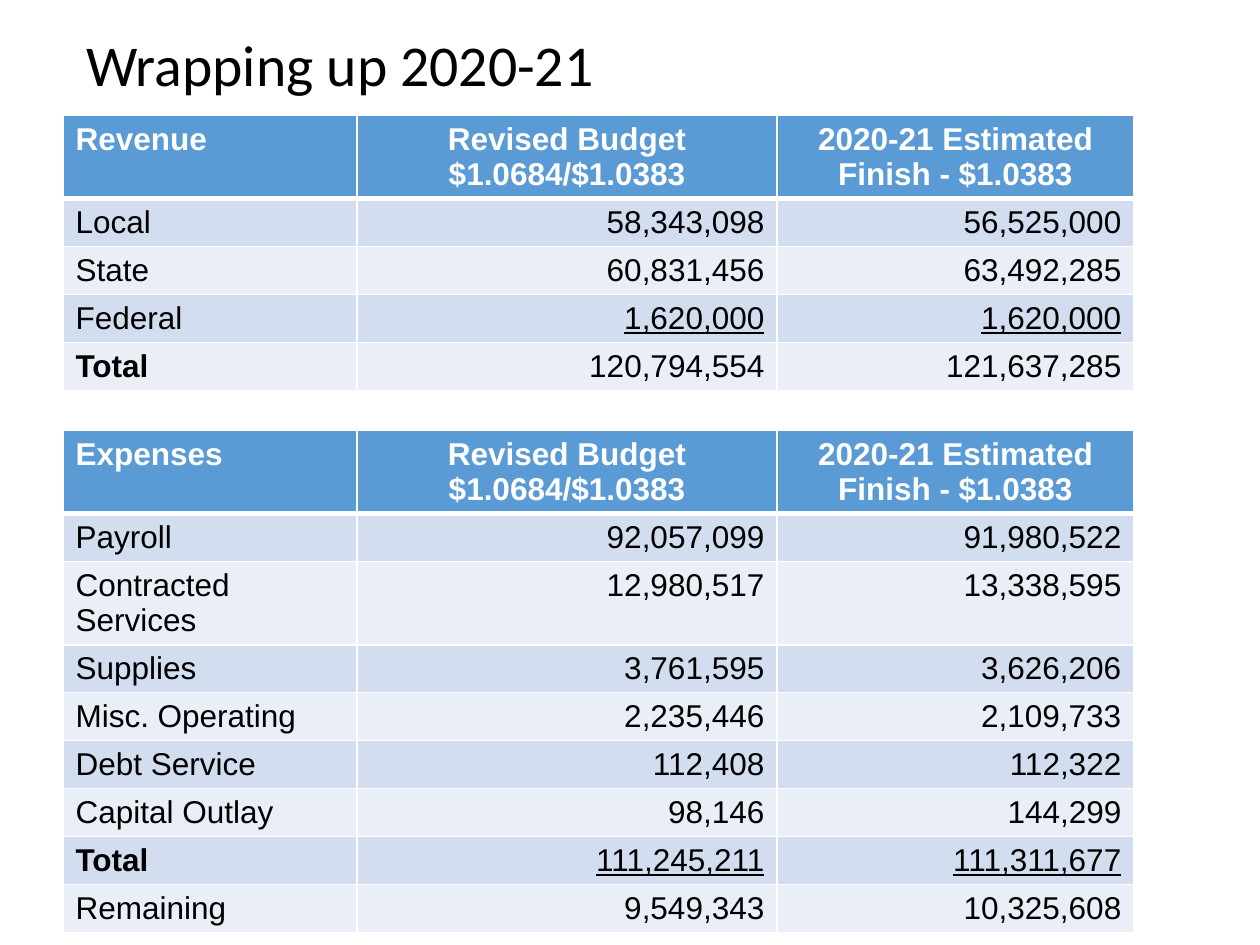
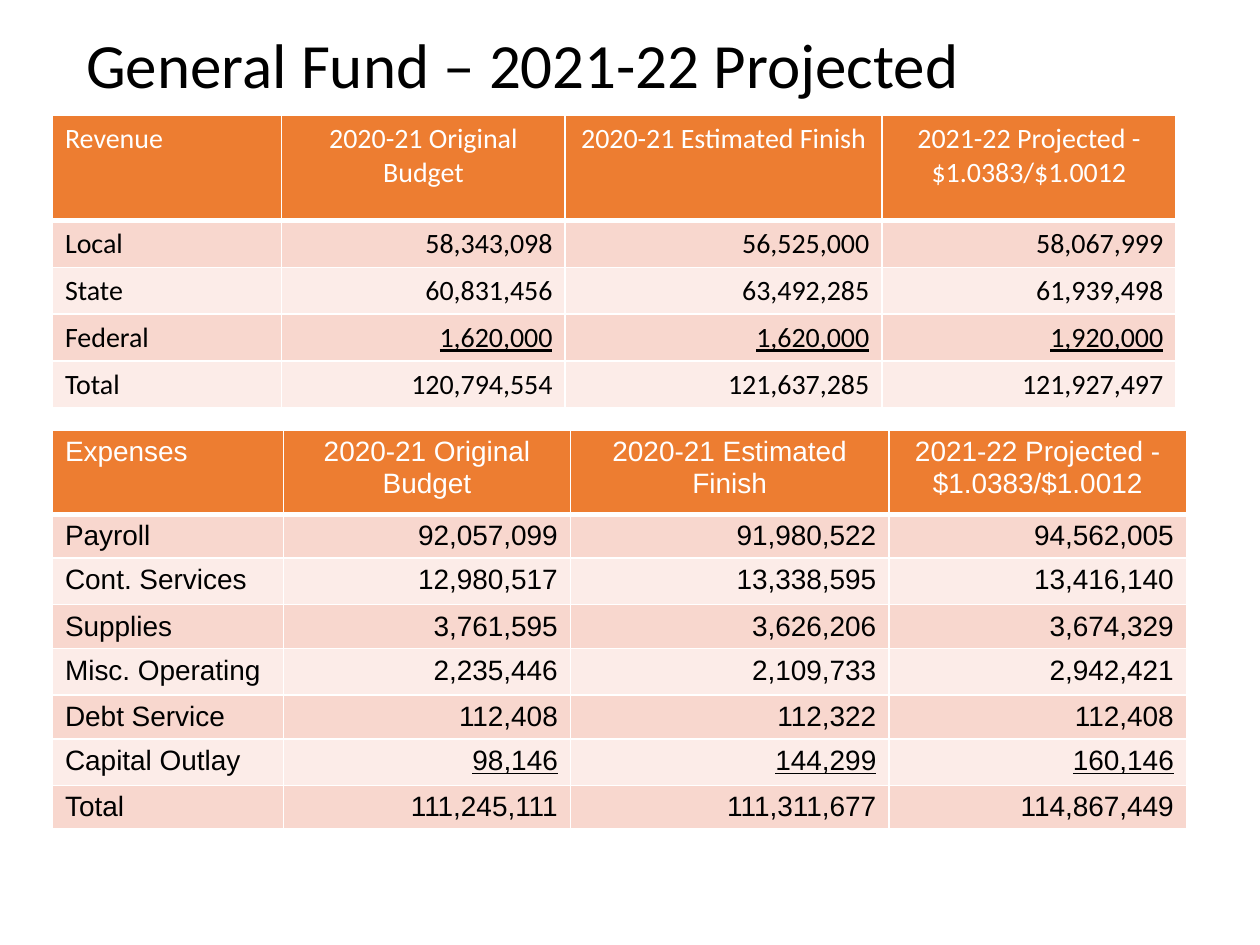
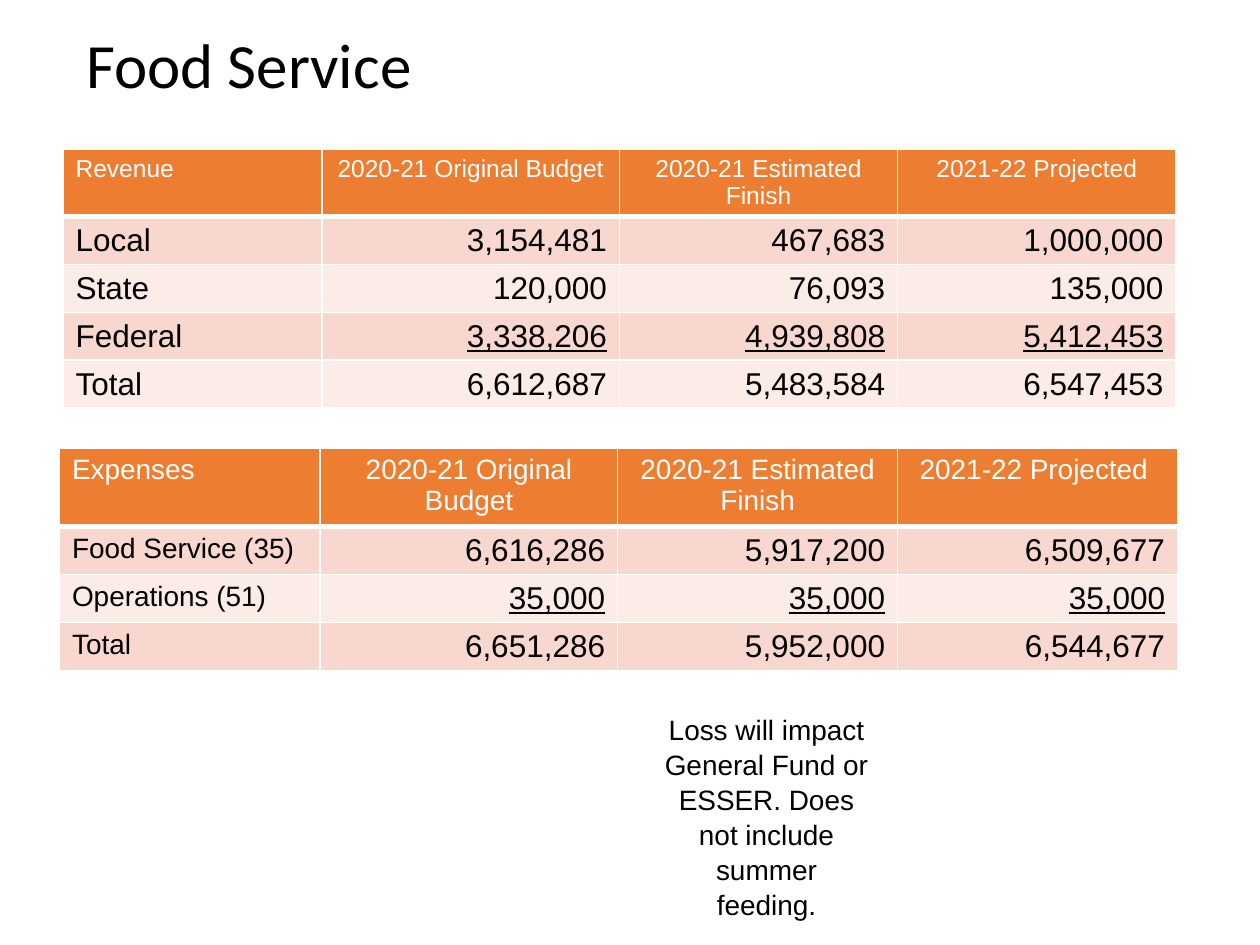
from pptx import Presentation
from pptx.dml.color import RGBColor
from pptx.enum.text import MSO_ANCHOR, MSO_AUTO_SIZE, PP_ALIGN
from pptx.oxml import parse_xml
from pptx.oxml.ns import nsdecls
from pptx.util import Pt

LEFT, CENTER, RIGHT = PP_ALIGN.LEFT, PP_ALIGN.CENTER, PP_ALIGN.RIGHT
MIDDLE = MSO_ANCHOR.MIDDLE
NO_AUTOFIT, GROW_SHAPE = MSO_AUTO_SIZE.NONE, MSO_AUTO_SIZE.SHAPE_TO_FIT_TEXT

BLACK = RGBColor(0x00, 0x00, 0x00)
WHITE = RGBColor(0xFF, 0xFF, 0xFF)
# Header fill, then the two alternating row fills
BLUE = (RGBColor(0x5B, 0x9B, 0xD5), RGBColor(0xD2, 0xDE, 0xEF), RGBColor(0xEA, 0xEF, 0xF7))
ORANGE = (RGBColor(0xED, 0x7D, 0x31), RGBColor(0xF8, 0xD7, 0xCE), RGBColor(0xFC, 0xEC, 0xE8))

TITLE_ONLY = 5
THIN, THICK = Pt(1), Pt(3)

BUDGET_FINISH = ["Revised Budget\n$1.0684/$1.0383", "2020-21 Estimated Finish - $1.0383"]
ORIGINAL_ESTIMATED = ["2020-21 Original Budget", "2020-21 Estimated Finish"]
FUND_COLUMNS = ORIGINAL_ESTIMATED + ["2021-22 Projected - $1.0383/$1.0012"]
FOOD_COLUMNS = ORIGINAL_ESTIMATED + ["2021-22 Projected"]

WRAP_UP_REVENUE = [
    ["Revenue", *BUDGET_FINISH],
    ["Local", "58,343,098", "56,525,000"],
    ["State", "60,831,456", "63,492,285"],
    ["Federal", "1,620,000", "1,620,000"],
    ["Total", "120,794,554", "121,637,285"],
]
WRAP_UP_EXPENSES = [
    ["Expenses", *BUDGET_FINISH],
    ["Payroll", "92,057,099", "91,980,522"],
    ["Contracted Services", "12,980,517", "13,338,595"],
    ["Supplies", "3,761,595", "3,626,206"],
    ["Misc. Operating", "2,235,446", "2,109,733"],
    ["Debt Service", "112,408", "112,322"],
    ["Capital Outlay", "98,146", "144,299"],
    ["Total", "111,245,211", "111,311,677"],
    ["Remaining", "9,549,343", "10,325,608"],
]
FUND_REVENUE = [
    ["Revenue", *FUND_COLUMNS],
    ["Local", "58,343,098", "56,525,000", "58,067,999"],
    ["State", "60,831,456", "63,492,285", "61,939,498"],
    ["Federal", "1,620,000", "1,620,000", "1,920,000"],
    ["Total", "120,794,554", "121,637,285", "121,927,497"],
]
FUND_EXPENSES = [
    ["Expenses", *FUND_COLUMNS],
    ["Payroll", "92,057,099", "91,980,522", "94,562,005"],
    ["Cont. Services", "12,980,517", "13,338,595", "13,416,140"],
    ["Supplies", "3,761,595", "3,626,206", "3,674,329"],
    ["Misc. Operating", "2,235,446", "2,109,733", "2,942,421"],
    ["Debt Service", "112,408", "112,322", "112,408"],
    ["Capital Outlay", "98,146", "144,299", "160,146"],
    ["Total", "111,245,111", "111,311,677", "114,867,449"],
]
FOOD_REVENUE = [
    ["Revenue", *FOOD_COLUMNS],
    ["Local", "3,154,481", "467,683", "1,000,000"],
    ["State", "120,000", "76,093", "135,000"],
    ["Federal", "3,338,206", "4,939,808", "5,412,453"],
    ["Total", "6,612,687", "5,483,584", "6,547,453"],
]
FOOD_EXPENSES = [
    ["Expenses", *FOOD_COLUMNS[:-1], "2021-22 Projected "],
    ["Food Service (35)", "6,616,286", "5,917,200", "6,509,677"],
    ["Operations (51)", "35,000", "35,000", "35,000"],
    ["Total", "6,651,286", "5,952,000", "6,544,677"],
]


def write_text(text_frame, text, alignment, color, line_spacing=None, **font_format):
    """Fill the frame, one paragraph per line of text, in one format."""
    text_frame.text = text
    for paragraph in text_frame.paragraphs:
        paragraph.alignment = alignment
        paragraph.line_spacing = line_spacing
        for run in paragraph.runs:
            run.font.color.rgb = color
            for name, value in font_format.items():
                setattr(run.font, name, value)


def add_titled_slide(presentation, text, size, top, height):
    slide = presentation.slides.add_slide(presentation.slide_layouts[TITLE_ONLY])
    title = slide.shapes.title
    place = {"left": Pt(42), "top": Pt(top), "width": Pt(644), "height": Pt(height)}
    for name, value in place.items():
        setattr(title, name, value)
    title.text_frame.auto_size = NO_AUTOFIT
    title.text_frame.vertical_anchor = MIDDLE
    write_text(title.text_frame, text, LEFT, BLACK, 0.9, name="Calibri", size=Pt(size))
    return slide


def set_borders(cell, is_header):
    """Draw white borders; the header's thick bottom edge stands in for the next row's top."""
    widths = {"lnL": THIN, "lnR": THIN, "lnB": THICK if is_header else THIN}
    if is_header:
        widths = {"lnL": THIN, "lnR": THIN, "lnT": THIN, "lnB": THICK}
    properties = cell._tc.get_or_add_tcPr()
    for position, (edge, width) in enumerate(widths.items()):
        properties.insert(position, parse_xml(
            f'<a:{edge} {nsdecls("a")} w="{width}"><a:solidFill>'
            f'<a:srgbClr val="{WHITE}"/></a:solidFill></a:{edge}>'))


def add_budget_table(slide, rows, position, column_widths, row_heights, palette, sizes,
                     underlined, font_name="Arial", bold_header=False, bold_label=None):
    """Add a table; sizes are those of the header, the row labels and the values."""
    left, top = position
    header_size, label_size, value_size = sizes
    header_fill, *band_fills = palette
    table = slide.shapes.add_table(
        len(rows), len(column_widths), Pt(left), Pt(top),
        Pt(sum(column_widths)), Pt(sum(row_heights))).table
    table.horz_banding = False
    for column, width in zip(table.columns, column_widths):
        column.width = Pt(width)
    for row, height in zip(table.rows, row_heights):
        row.height = Pt(height)

    for row_index, texts in enumerate(rows):
        is_header = row_index == 0
        for column_index, text in enumerate(texts):
            is_label = column_index == 0
            cell = table.cell(row_index, column_index)
            cell.fill.solid()
            cell.fill.fore_color.rgb = header_fill if is_header else band_fills[(row_index - 1) % 2]
            set_borders(cell, is_header)
            if is_header:
                size, alignment, bold = header_size, CENTER, bold_header
            else:
                size, alignment, bold = value_size, RIGHT, False
            if is_label:
                alignment = LEFT
                if not is_header:
                    size, bold = label_size, text == bold_label
            write_text(cell.text_frame, text, alignment, WHITE if is_header else BLACK,
                       name=font_name, size=Pt(size), bold=bold,
                       underline=texts[0] == underlined and not is_label)


def add_note(slide, text, left, top, width, height):
    note = slide.shapes.add_textbox(Pt(left), Pt(top), Pt(width), Pt(height))
    note.text_frame.word_wrap = True
    note.text_frame.auto_size = GROW_SHAPE
    write_text(note.text_frame, text, CENTER, BLACK, 1.04, name="Arial", size=Pt(16))


def build_wrap_up(presentation):
    slide = add_titled_slide(presentation, "Wrapping up 2020-21", 33, 12, 54)
    shared = {"column_widths": [168, 240, 204], "palette": BLUE, "sizes": (18, 18, 18),
              "bold_header": True, "bold_label": "Total"}
    add_budget_table(slide, WRAP_UP_REVENUE, (36, 66), row_heights=[41] + [26] * 4,
                     underlined="Federal", **shared)
    add_budget_table(slide, WRAP_UP_EXPENSES, (36, 246), row_heights=[27.4] * 9,
                     underlined="Total", **shared)


def build_general_fund(presentation):
    slide = add_titled_slide(presentation, "General Fund – 2021-22 Projected", 36, 6, 66)
    shared = {"palette": ORANGE, "sizes": (16, 16, 16)}
    add_budget_table(slide, FUND_REVENUE, (30, 66), [131, 162, 181, 168], [60] + [24] * 4,
                     underlined="Federal", font_name="Calibri", **shared)
    add_budget_table(slide, FUND_EXPENSES, (30, 246), [132, 164, 182, 170],
                     [48] + [24, 26.6] * 3 + [24], underlined="Capital Outlay", **shared)


def build_food_service(presentation):
    slide = add_titled_slide(presentation, "Food Service", 36, 6, 66)
    add_budget_table(slide, FOOD_REVENUE, (36, 85), [148, 170, 159, 159], [26] * 5,
                     ORANGE, (14, 18, 18), "Federal")
    add_budget_table(slide, FOOD_EXPENSES, (34, 256), [149, 170, 160, 160], [45] + [26] * 3,
                     ORANGE, (16, 16, 18), "Operations (51)")
    add_note(slide, "Loss will impact\nGeneral Fund or ESSER. Does not include summer feeding.",
             372, 403, 132, 124)


def main():
    presentation = Presentation()
    presentation.slide_width, presentation.slide_height = Pt(720), Pt(540)
    build_wrap_up(presentation)
    build_general_fund(presentation)
    build_food_service(presentation)
    presentation.save("out.pptx")


if __name__ == "__main__":
    main()
